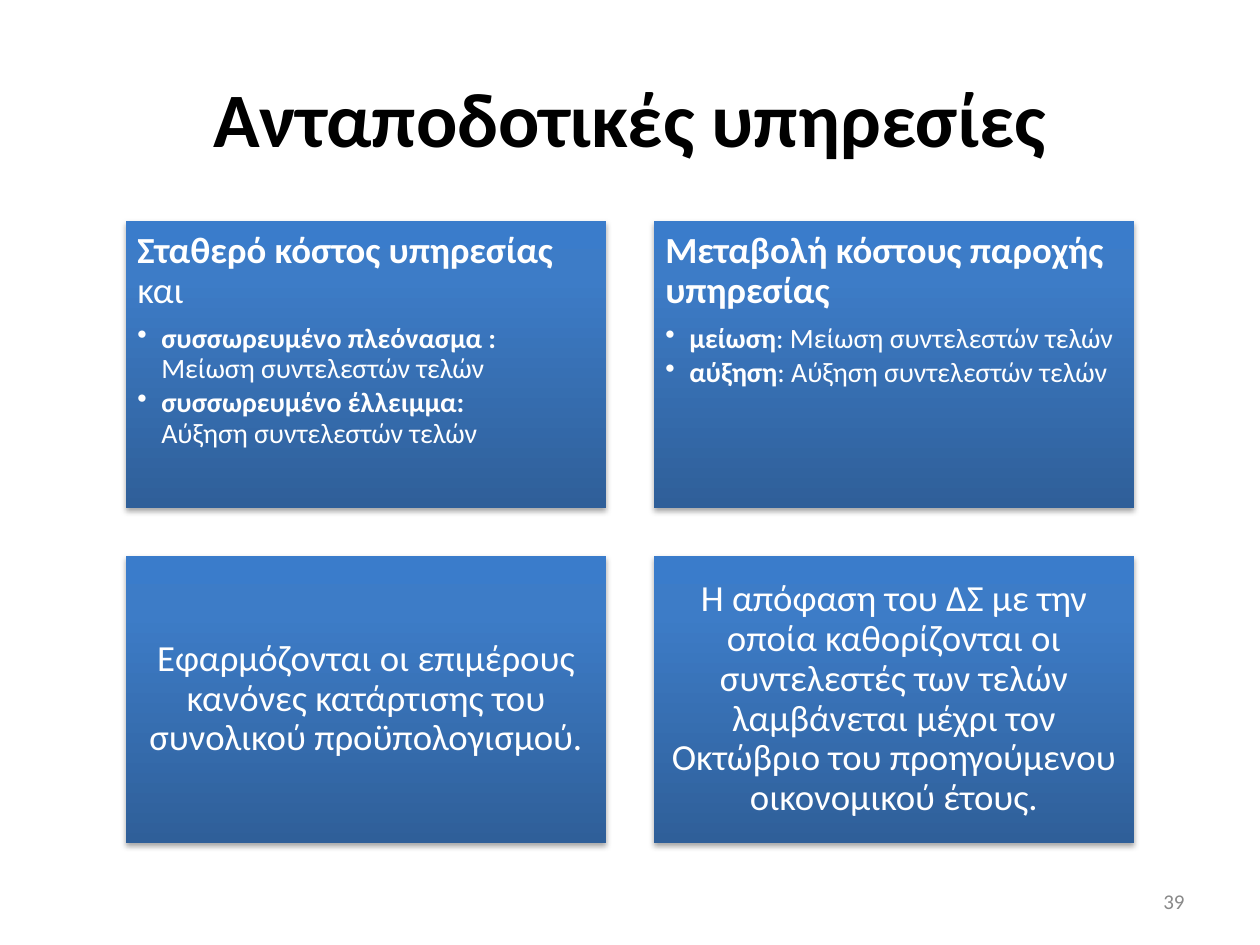
from lxml import etree
from pptx import Presentation
from pptx.dml.color import RGBColor
from pptx.enum.shapes import MSO_SHAPE
from pptx.enum.text import MSO_ANCHOR, PP_ALIGN
from pptx.oxml.ns import qn
from pptx.util import Inches, Pt

RECTANGLE = MSO_SHAPE.RECTANGLE
TOP, MIDDLE = MSO_ANCHOR.TOP, MSO_ANCHOR.MIDDLE
LEFT, CENTER, RIGHT = PP_ALIGN.LEFT, PP_ALIGN.CENTER, PP_ALIGN.RIGHT

FONT = "Calibri"
COLORS = {"title": "000000", "number": "898989", "card_text": "FFFFFF", "shadow": "000000"}
GRADIENT = [(0, "2F5F99"), (80, "3D7CC7"), (100, "3A7CCB")]

TITLE = "Ανταποδοτικές υπηρεσίες"
PAGE_NUMBER = "39"
CARDS = [
    {"heading": [("Σταθερό κόστος υπηρεσίας ", True), ("και", False)],
     "bullets": [
         [("συσσωρευμένο πλεόνασμα :", True), (" Μείωση συντελεστών τελών", False)],
         [("συσσωρευμένο έλλειμμα:", True), ("\nΑύξηση συντελεστών τελών", False)]]},
    {"heading": [("Μεταβολή κόστους παροχής υπηρεσίας", True)],
     "bullets": [
         [("μείωση", True), (": Μείωση συντελεστών τελών", False)],
         [("αύξηση", True), (": Αύξηση συντελεστών τελών", False)]]},
    {"heading": [("Εφαρμόζονται οι επιμέρους κανόνες κατάρτισης του "
                  "συνολικού προϋπολογισμού.", False)],
     "bullets": []},
    {"heading": [("Η απόφαση του ΔΣ με την οποία καθορίζονται οι συντελεστές των τελών "
                  "λαμβάνεται μέχρι τον Οκτώβριο του προηγούμενου οικονομικού έτους.", False)],
     "bullets": []},
]

COLUMNS = 2
GRID_LEFT, GRID_TOP = 1, 1.75
CARD_WIDTH, CARD_HEIGHT, GAP = 3.81, 2.28, 0.38
CARD_INSET, BULLET_INDENT = 0.09, 0.19
HEADING_SIZE, BULLET_SIZE = 21, 16


def set_font(paragraph, size, color, bold=None):
    font = paragraph.font
    font.name, font.size, font.bold = FONT, Pt(size), bold
    font.color.rgb = RGBColor.from_string(COLORS[color])


def add_color(parent, value):
    return etree.SubElement(parent, qn("a:srgbClr"), val=value)


def style_card(card):
    properties = card._element.spPr
    gradient = etree.SubElement(properties, qn("a:gradFill"), rotWithShape="1")
    stops = etree.SubElement(gradient, qn("a:gsLst"))
    for position, color in GRADIENT:
        add_color(etree.SubElement(stops, qn("a:gs"), pos=str(position * 1000)), color)
    etree.SubElement(gradient, qn("a:lin"), ang="16200000", scaled="0")
    card.line.fill.background()
    effects = etree.SubElement(properties, qn("a:effectLst"))
    shadow = etree.SubElement(effects, qn("a:outerShdw"), blurRad=str(Pt(3.1)),
                              dist=str(Pt(1.8)), dir="5400000", rotWithShape="0")
    etree.SubElement(add_color(shadow, COLORS["shadow"]), qn("a:alpha"), val="35000")


def write_paragraph(paragraph, parts, size, space_share, alignment):
    paragraph.alignment = alignment
    paragraph.line_spacing = 0.9
    paragraph.space_after = Pt(size * space_share)
    set_font(paragraph, size, "card_text")
    for text, bold in parts:
        if text.startswith("\n"):
            paragraph.add_line_break()
        run = paragraph.add_run()
        run.text = text.lstrip("\n")
        run.font.bold = bold


def add_bullet(paragraph):
    paragraph.level = 1
    properties = paragraph._p.get_or_add_pPr()
    properties.set("marL", str(Inches(BULLET_INDENT)))
    properties.set("indent", str(-Inches(BULLET_INDENT)))
    bullet = etree.Element(qn("a:buChar"), char="•")
    properties.find(qn("a:spcAft")).addnext(bullet)


def add_card(slide, index, content):
    row, column = divmod(index, COLUMNS)
    card = slide.shapes.add_shape(
        RECTANGLE,
        Inches(GRID_LEFT + column * (CARD_WIDTH + GAP)),
        Inches(GRID_TOP + row * (CARD_HEIGHT + GAP)),
        Inches(CARD_WIDTH), Inches(CARD_HEIGHT))
    style_card(card)
    frame = card.text_frame
    frame.word_wrap = True
    frame.margin_left = frame.margin_right = Inches(CARD_INSET)
    frame.margin_top = frame.margin_bottom = Inches(CARD_INSET)
    bullets = content["bullets"]
    frame.vertical_anchor = TOP if bullets else MIDDLE
    write_paragraph(frame.paragraphs[0], content["heading"], HEADING_SIZE, 0.35,
                    LEFT if bullets else CENTER)
    for parts in bullets:
        paragraph = frame.add_paragraph()
        write_paragraph(paragraph, parts, BULLET_SIZE, 0.15, LEFT)
        add_bullet(paragraph)


def write_line(holder, text, size, color, alignment, bold=None):
    frame = holder.text_frame
    frame.word_wrap = True
    frame.vertical_anchor = MIDDLE
    frame.text = text
    paragraph = frame.paragraphs[0]
    paragraph.alignment = alignment
    set_font(paragraph, size, color, bold)


def main():
    """Build the slide on reciprocal services and save it."""
    presentation = Presentation()
    presentation.slide_width, presentation.slide_height = Inches(10), Inches(7.5)
    slide = presentation.slides.add_slide(presentation.slide_layouts.get_by_name("Title Only"))

    title = slide.shapes.title
    title.left, title.top = Inches(0.5), Inches(0.3)
    title.width, title.height = Inches(9), Inches(1.25)
    write_line(title, TITLE, 44, "title", CENTER, True)

    for index, content in enumerate(CARDS):
        add_card(slide, index, content)

    number = slide.shapes.add_textbox(Inches(7.17), Inches(6.95), Inches(2.33), Inches(0.4))
    write_line(number, PAGE_NUMBER, 12, "number", RIGHT)

    presentation.save("out.pptx")


if __name__ == "__main__":
    main()
